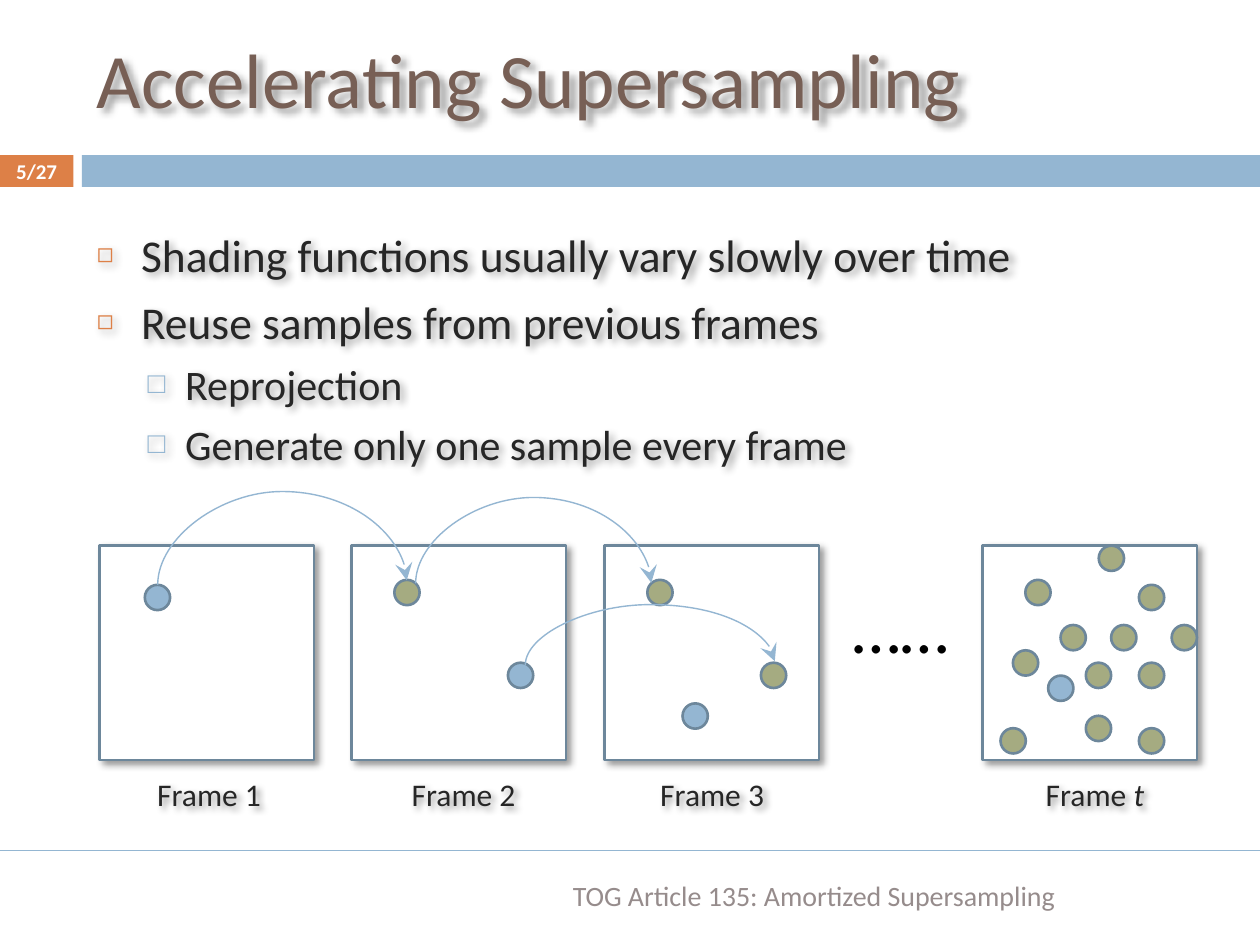
from lxml import etree
from pptx import Presentation
from pptx.dml.color import RGBColor
from pptx.enum import shapes, text
from pptx.oxml import parse_xml
from pptx.oxml.ns import nsdecls, qn
from pptx.util import Cm, Pt

BLUE, GREEN, ORANGE = "94B6D2", "A5AB81", "DD8047"
OUTLINE, INK, WHITE = "6D879B", "262626", "FFFFFF"
color = RGBColor.from_string


def cast_shadow(shape):
    shape.shadow.inherit = False
    effects = shape._element.spPr.find(qn("a:effectLst"))
    effects.append(parse_xml(
        f'<a:outerShdw {nsdecls("a")} blurRad="50800" dist="38100" dir="2700000" algn="tl" rotWithShape="0">'
        '<a:srgbClr val="000000"><a:alpha val="40000"/></a:srgbClr></a:outerShdw>'))


def write(paragraph, words, size, ink, **formats):
    run = paragraph.add_run()
    run.text = words
    run.font.color.rgb = color(ink)
    for name, value in {"name": "Calibri", "size": Pt(size), **formats}.items():
        setattr(run.font, name, value)


prs = Presentation()
prs.slide_width, prs.slide_height = Cm(25.4), Cm(19.05)
slide = prs.slides.add_slide(prs.slide_layouts[1])
title, body = slide.placeholders
canvas = slide.shapes

# Header band and footer rule
for left, width, fill in [(0, 1.48, ORANGE), (1.65, 23.75, BLUE)]:
    band = canvas.add_shape(shapes.MSO_SHAPE.RECTANGLE, Cm(left), Cm(3.13), Cm(width), Cm(0.64))
    band.shadow.inherit = False
    band.fill.solid()
    band.fill.fore_color.rgb = color(fill)
    band.line.fill.background()

rule = canvas.add_connector(shapes.MSO_CONNECTOR.STRAIGHT, 0, Cm(17.15), Cm(25.4), Cm(17.15))

# Title and bullets
for holder, top, height in [(title, 0.2, 2.74), (body, 4.45, 12.5)]:
    holder.left, holder.top, holder.width, holder.height = map(Cm, (1.7, top, 22.66, height))
    holder.text_frame.auto_size = text.MSO_AUTO_SIZE.NONE
    cast_shadow(holder)
title.text_frame.vertical_anchor = text.MSO_ANCHOR.MIDDLE
title.text_frame.paragraphs[0].alignment = text.PP_ALIGN.LEFT
write(title.text_frame.paragraphs[0], "Accelerating Supersampling", 44, "775F55")

levels = [
    {"indent": (0.89, -0.89), "mark": "◻", "tint": ORANGE, "scale": 60, "size": 26, "before": 7},
    {"indent": (1.78, -0.76), "mark": "□", "tint": BLUE, "scale": 70, "size": 24, "before": 5.5},
]
points = [
    (0, "Shading functions usually vary slowly over time"),
    (0, "Reuse samples from previous frames"),
    (1, "Reprojection"),
    (1, "Generate only one sample every frame"),
]
for index, (depth, words) in enumerate(points):
    point = body.text_frame.add_paragraph() if index else body.text_frame.paragraphs[0]
    look = levels[depth]
    point.level = depth
    props = point._p.get_or_add_pPr()
    for key, length in zip(("marL", "indent"), look["indent"]):
        props.set(key, str(Cm(length)))
    tint = etree.SubElement(props, qn("a:buClr"))
    etree.SubElement(tint, qn("a:srgbClr"), val=look["tint"])
    etree.SubElement(props, qn("a:buSzPct"), val=str(look["scale"] * 1000))
    etree.SubElement(props, qn("a:buChar"), char=look["mark"])
    point.space_before = Pt(look["before"] if index else 0)
    write(point, words, look["size"], INK)

# Frames with their samples: offsets from the frame's corner, one fresh (blue) sample each
frame_top, frame_size, dot = 11, 4.32, 0.51
frames = [
    (2.01, (0.91, 0.79), []),
    (7.09, (3.15, 2.36), [(0.86, 0.69)]),
    (12.19, (1.57, 3.18), [(0.86, 0.69), (3.15, 2.36)]),
    (19.81, (1.32, 2.62), [
        (0.86, 0.69), (3.15, 2.36), (0.61, 2.11), (1.57, 1.6), (3.15, 0.79), (2.08, 2.36),
        (2.34, 0), (3.15, 3.68), (0.36, 3.68), (2.08, 3.43), (2.59, 1.6), (3.81, 1.6)]),
]
for left, fresh, reused in frames:
    pieces = [(shapes.MSO_SHAPE.RECTANGLE, 0, 0, frame_size, WHITE)]
    pieces += [(shapes.MSO_SHAPE.OVAL, x, y, dot, GREEN) for x, y in reused]
    pieces.append((shapes.MSO_SHAPE.OVAL, *fresh, dot, BLUE))
    for kind, x, y, size, fill in pieces:
        piece = canvas.add_shape(kind, Cm(left + x), Cm(frame_top + y), Cm(size), Cm(size))
        piece.shadow.inherit = False
        piece.fill.solid()
        piece.fill.fore_color.rgb = color(fill)
        piece.line.color.rgb = color(OUTLINE)
        piece.line.width = Pt(1.5)
        if fill == WHITE:
            cast_shadow(piece)

# Reprojection arcs: start x, end x, start y, climb from start to end, climb to the peak.
# Each is a curved connector turned a quarter, so its width is the climb and its height the span.
reprojections = [
    (3.18, 8.2, 11.79, 0.09, 1.88),
    (10.59, 15.62, 13.41, 0.08, 1.22),
    (8.38, 13.13, 11.76, 0.01, 1.73),
]
arcs = []
for start, end, base, climb, rise in reprojections:
    span = end - start
    left = (start + end - climb) / 2
    top = base - (climb + span) / 2
    arc = canvas.add_connector(shapes.MSO_CONNECTOR.CURVE, Cm(left), Cm(top), Cm(left + climb), Cm(top + span))
    turn = arc._element.spPr.find(qn("a:xfrm"))
    for key, value in {"rot": "5400000", "flipH": "1", "flipV": "1"}.items():
        turn.set(key, value)
    bend = arc._element.spPr.find(qn("a:prstGeom")).find(qn("a:avLst"))
    etree.SubElement(bend, qn("a:gd"), name="adj1", fmla=f"val {round(rise / climb * 100000)}")
    arcs.append(arc)

for line in [rule, *arcs]:
    line.line.color.rgb = color(BLUE)
    line.line.width = Pt(0.79)
    etree.SubElement(line._element.spPr, qn("a:effectLst"))
for arc in arcs:
    stroke = arc._element.spPr.find(qn("a:ln"))
    etree.SubElement(stroke, qn("a:tailEnd"), type="stealth", w="lg", len="lg")

# Frame captions and ellipsis
label = {"size": 18, "ink": INK}
captions = [
    ((2.92, 15.49, 2.62, 1.02), [("Frame 1", label)]),
    ((8.05, 15.49, 2.62, 1.02), [("Frame 2", label)]),
    ((13.06, 15.49, 2.62, 1.02), [("Frame 3", label)]),
    ((20.83, 15.49, 2.51, 1.02), [("Frame ", label), ("t", {**label, "italic": True})]),
    ((16.94, 11.63, 2.49, 1.96), [("……", {"size": 40, "ink": "000000"})]),
]
for place, runs in captions:
    caption = canvas.add_textbox(*map(Cm, place))
    caption.text_frame.word_wrap = False
    for words, formats in runs:
        write(caption.text_frame.paragraphs[0], words, **formats)
    if runs[0][1] is label:
        cast_shadow(caption)

# Footer and page number
margins = [
    ((7.42, 17.58, 17.98, 0.94), "TOG Article 135: Amortized Supersampling", {"size": 16, "ink": "968C8C"}),
    ((0, 3.1, 1.48, 0.69), "5/27", {"size": 12, "ink": WHITE, "bold": True}),
]
for place, words, formats in margins:
    note = canvas.add_textbox(*map(Cm, place)).text_frame
    note.word_wrap = True
    note.margin_left = note.margin_right = 0
    note.vertical_anchor = text.MSO_ANCHOR.MIDDLE
    note.paragraphs[0].alignment = text.PP_ALIGN.CENTER
    write(note.paragraphs[0], words, **formats)

prs.save("out.pptx")
